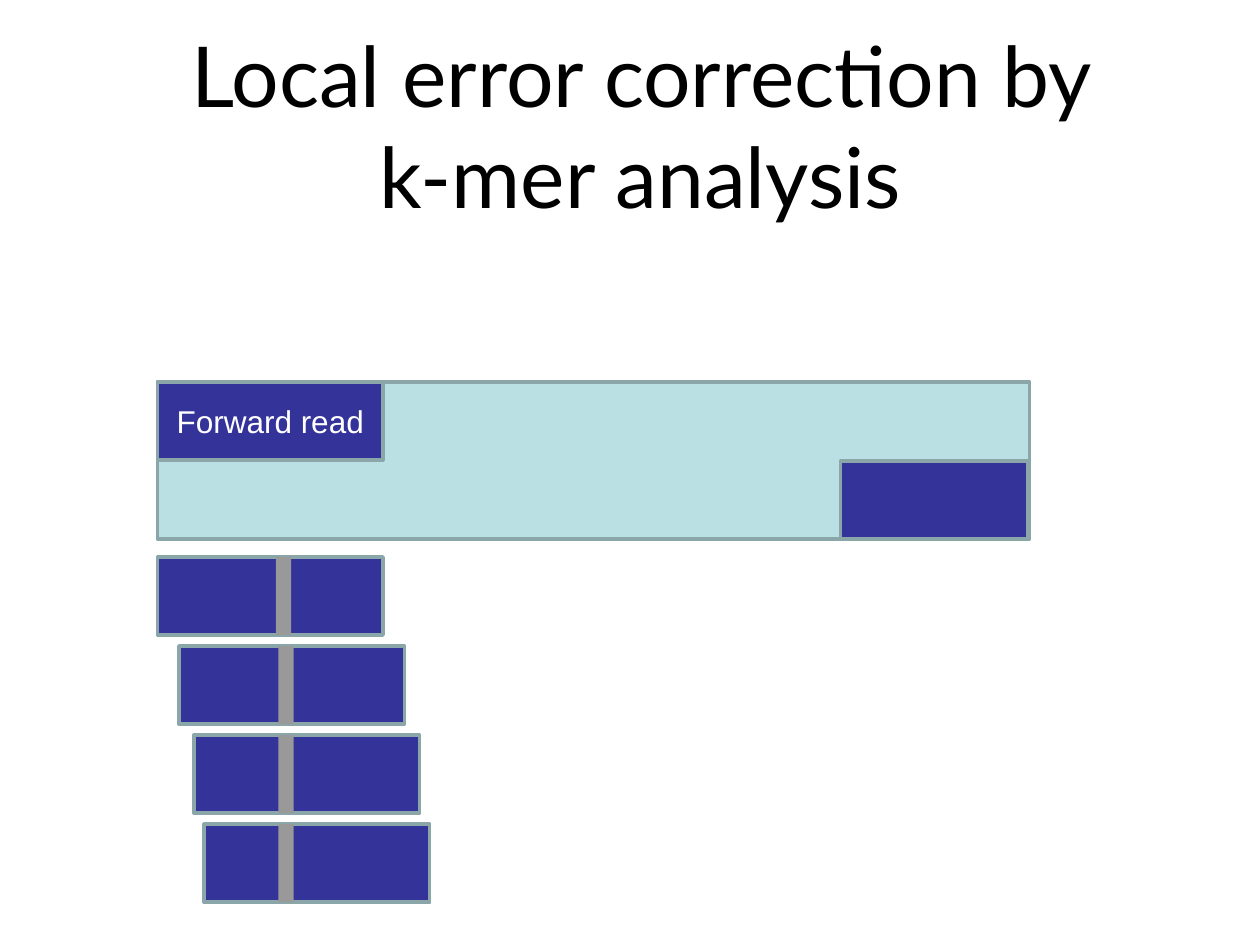
"""Build a slide on local error correction of reads by k-mer analysis."""
from pptx import Presentation
from pptx.dml.color import RGBColor
from pptx.enum.shapes import MSO_SHAPE
from pptx.enum.text import MSO_ANCHOR, PP_ALIGN
from pptx.util import Inches, Pt

TITLE = "Local error correction by k-mer analysis"
READ_LABEL = "Forward read"
COLORS = {
    "title": "000000",
    "label": "FFFFFF",
    "fragment": "BBE0E3",
    "read": "333399",
    "outline": "8AA6A8",
    "error": "999999",
}
FRAGMENT = (1.25, 3.03, 6.92, 1.25)
READ_WIDTH, READ_HEIGHT = 1.79, 0.62
REVERSE_READ = (6.67, 3.66, 1.49, READ_HEIGHT)
ALIGNED_READS = [(1.25, 2.19), (1.42, 2.21), (1.54, 2.21), (1.62, 2.21)]
ALIGNED_TOP, ALIGNED_STEP = 4.42, 0.707
ERROR_WIDTH = 0.12


def color(name):
    return RGBColor.from_string(COLORS[name])


def add_bar(slide, box, fill, outlined=True):
    shape = slide.shapes.add_shape(MSO_SHAPE.RECTANGLE, *map(Inches, box))
    shape.shadow.inherit = False
    shape.fill.solid()
    shape.fill.fore_color.rgb = color(fill)
    if outlined:
        shape.line.color.rgb = color("outline")
        shape.line.width = Pt(2)
    else:
        shape.line.fill.background()
    return shape


def write(shape, text, font, size, fill, anchor):
    frame = shape.text_frame
    frame.word_wrap = True
    frame.vertical_anchor = anchor
    paragraph = frame.paragraphs[0]
    paragraph.alignment = PP_ALIGN.CENTER
    run = paragraph.add_run()
    run.text = text
    run.font.name = font
    run.font.size = Pt(size)
    run.font.color.rgb = color(fill)


def main():
    presentation = Presentation()
    presentation.slide_width = Inches(10)
    presentation.slide_height = Inches(7.5)
    slide = presentation.slides.add_slide(presentation.slide_layouts[6])

    title = slide.shapes.add_textbox(*map(Inches, (1.25, 0.14, 7.67, 1.72)))
    write(title, TITLE, "Lato", 48, "title", MSO_ANCHOR.TOP)

    add_bar(slide, FRAGMENT, "fragment")
    forward_read = add_bar(slide, (*FRAGMENT[:2], READ_WIDTH, READ_HEIGHT), "read")
    write(forward_read, READ_LABEL, "Arial", 18, "label", MSO_ANCHOR.MIDDLE)
    add_bar(slide, REVERSE_READ, "read")

    for row, (read_left, error_left) in enumerate(ALIGNED_READS):
        top = ALIGNED_TOP + row * ALIGNED_STEP
        add_bar(slide, (read_left, top, READ_WIDTH, READ_HEIGHT), "read")
        add_bar(slide, (error_left, top, ERROR_WIDTH, READ_HEIGHT), "error", outlined=False)

    presentation.save("out.pptx")


if __name__ == "__main__":
    main()
